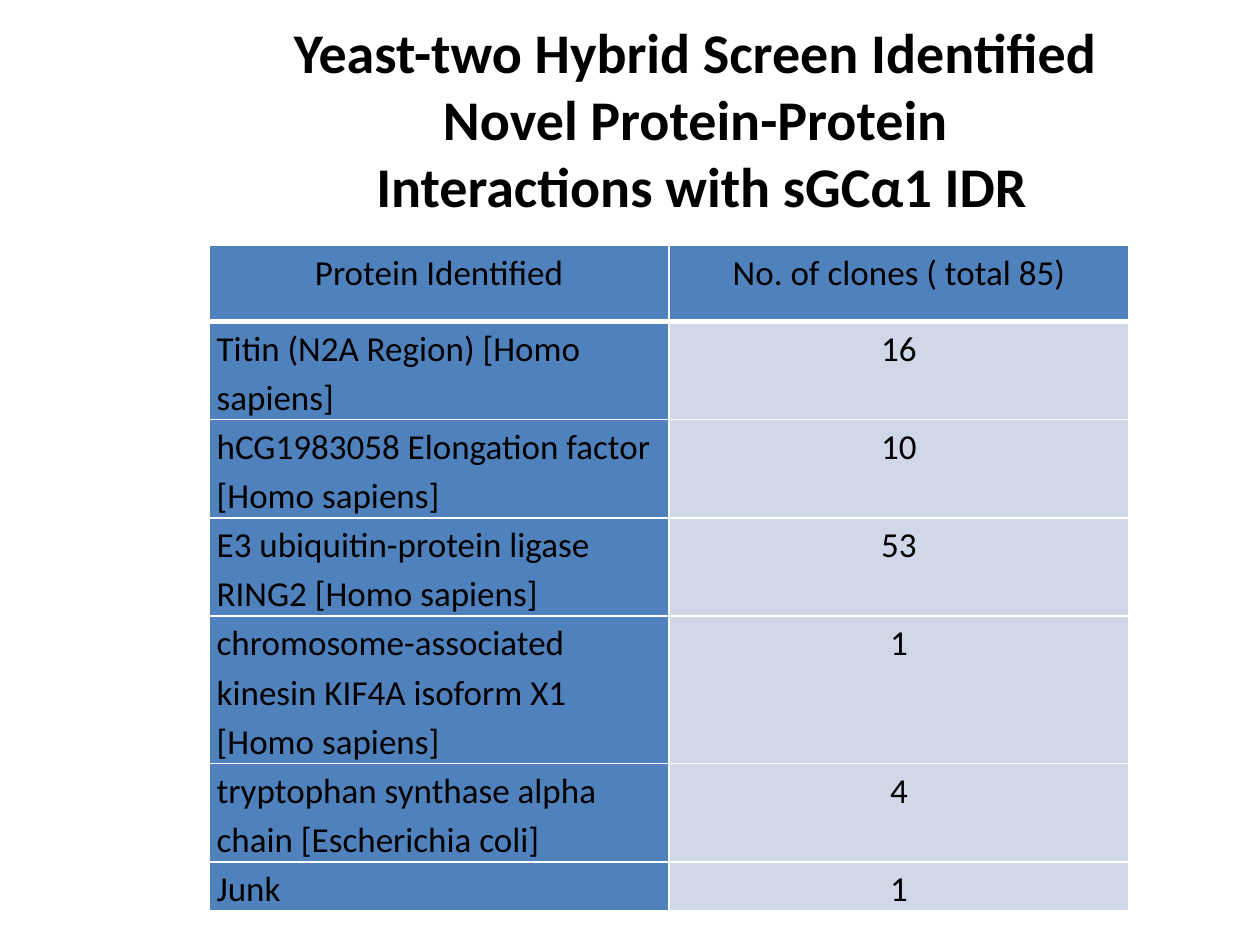
from dataclasses import dataclass

from lxml import etree
from pptx import Presentation
from pptx.dml.color import RGBColor
from pptx.enum.text import MSO_ANCHOR, PP_ALIGN
from pptx.oxml.ns import qn
from pptx.util import Inches, Pt

CENTER, LEFT = PP_ALIGN.CENTER, PP_ALIGN.LEFT
MIDDLE, TOP = MSO_ANCHOR.MIDDLE, MSO_ANCHOR.TOP


@dataclass(frozen=True)
class Theme:
    font: str = "Calibri"
    title_size: int = 32
    table_size: int = 20
    ink: str = "000000"
    accent: str = "4F81BD"
    pale: str = "D0D8E8"
    rule: str = "FFFFFF"


class SlideBuilder:
    def __init__(self, slide, theme):
        self.slide = slide
        self.theme = theme

    def add_run(self, paragraph, text, size, bold=False):
        run = paragraph.add_run()
        run.text = text
        run.font.name = self.theme.font
        run.font.size = Pt(size)
        run.font.bold = bold
        run.font.color.rgb = RGBColor.from_string(self.theme.ink)

    def add_title(self, lines, left, top, width, height):
        box = self.slide.shapes.add_textbox(
            Inches(left), Inches(top), Inches(width), Inches(height))
        frame = box.text_frame
        frame.word_wrap = True
        frame.vertical_anchor = MIDDLE
        frame.margin_bottom = Inches(0.58)
        heading = frame.paragraphs[0]
        heading.alignment = CENTER
        for index, line in enumerate(lines):
            if index:
                heading.add_line_break()
            self.add_run(heading, line, self.theme.title_size, bold=True)

    def add_borders(self, cell, bottom_width):
        properties = cell._tc.get_or_add_tcPr()
        for side, width in (("L", 1), ("R", 1), ("T", 1), ("B", bottom_width)):
            border = etree.SubElement(properties, qn(f"a:ln{side}"), w=str(Pt(width)))
            fill = etree.SubElement(border, qn("a:solidFill"))
            etree.SubElement(fill, qn("a:srgbClr"), val=self.theme.rule)

    def fill_cell(self, cell, text, color, alignment, bottom_width):
        self.add_borders(cell, bottom_width)
        cell.fill.solid()
        cell.fill.fore_color.rgb = RGBColor.from_string(color)
        cell.margin_left = cell.margin_right = Inches(0.06)
        cell.margin_top = cell.margin_bottom = 0
        cell.vertical_anchor = TOP
        paragraph = cell.text_frame.paragraphs[0]
        paragraph.alignment = alignment
        paragraph.line_spacing = 1.15
        self.add_run(paragraph, text, self.theme.table_size)

    def add_table(self, records, heights, left, top, width):
        table = self.slide.shapes.add_table(
            len(records), len(records[0]), Inches(left), Inches(top),
            Inches(width), Inches(sum(heights))).table
        for row, height in zip(table.rows, heights):
            row.height = Inches(height)
        for r, record in enumerate(records):
            for c, text in enumerate(record):
                header, label = r == 0, c == 0
                self.fill_cell(
                    table.cell(r, c), text,
                    self.theme.accent if header or label else self.theme.pale,
                    LEFT if label and not header else CENTER,
                    3 if header else 1)


TITLE_LINES = (
    "Yeast-two Hybrid Screen Identified ",
    "Novel Protein-Protein ",
    "Interactions with sGCα1 IDR",
)
CLONES = (
    ("Protein Identified", "No. of clones ( total 85)"),
    ("Titin (N2A Region) [Homo sapiens]", "16"),
    ("hCG1983058 Elongation factor [Homo sapiens]", "10"),
    ("E3 ubiquitin-protein ligase RING2 [Homo sapiens]", "53"),
    ("chromosome-associated kinesin KIF4A isoform X1 [Homo sapiens]", "1"),
    ("tryptophan synthase alpha chain [Escherichia coli]", "4"),
    ("Junk", "1"),
)
ROW_HEIGHTS = (0.6, 0.78, 0.78, 0.78, 1.17, 0.78, 0.39)


def main():
    deck = Presentation()
    deck.slide_width, deck.slide_height = Inches(10), Inches(7.5)
    builder = SlideBuilder(deck.slides.add_slide(deck.slide_layouts[6]), Theme())
    builder.add_title(TITLE_LINES, 2.04, 0.5, 7.06, 1.41)
    builder.add_table(CLONES, ROW_HEIGHTS, 1.66, 1.95, 7.3)
    deck.save("out.pptx")


if __name__ == "__main__":
    main()
